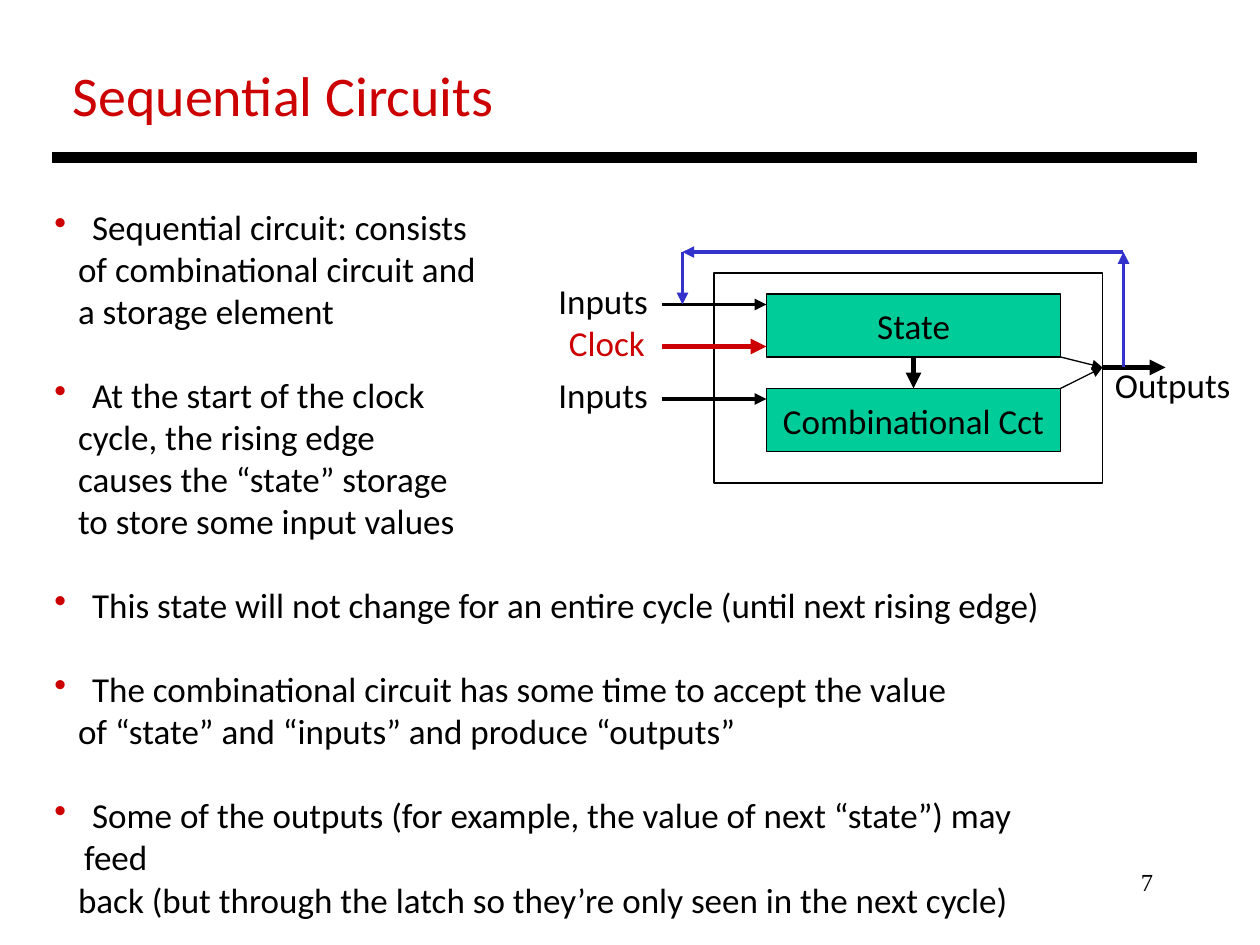
"""Build a slide on sequential circuits with a state diagram."""
from dataclasses import dataclass

from lxml.etree import SubElement as Sub
from pptx import Presentation as Deck
from pptx.dml.color import RGBColor as Color
from pptx.enum.shapes import MSO_CONNECTOR as Link, MSO_SHAPE as Form
from pptx.enum.text import MSO_ANCHOR as Anchor, MSO_AUTO_SIZE as Fit, PP_ALIGN as Align
from pptx.oxml.ns import qn
from pptx.util import Pt


@dataclass(frozen=True)
class Theme:
    black: Color = Color.from_string("000000")
    white: Color = Color.from_string("FFFFFF")
    red: Color = Color.from_string("CC0000")
    green: Color = Color.from_string("00CC99")
    blue: Color = Color.from_string("3333CC")
    font: str = "Calibri"
    serif: str = "Times New Roman"
    head: int = 32
    body: int = 20
    small: int = 14
    pitch: int = 24


LOOK = Theme()


@dataclass(frozen=True)
class Box:
    left: float
    top: float
    width: float
    height: float
    fill: Color
    text: str = ""


@dataclass(frozen=True)
class Line:
    start: tuple[float, float]
    end: tuple[float, float]
    weight: float
    color: Color = LOOK.black
    arrow: bool = True


@dataclass(frozen=True)
class Label:
    text: str
    left: float
    top: float
    width: float
    height: float = 31.5
    color: Color = LOOK.black
    size: int = LOOK.body


BOXES = (
    Box(408, 156, 222, 120, LOOK.white),
    Box(438, 168, 168, 36, LOOK.green, "State"),
    Box(438, 222, 168, 36, LOOK.green, "Combinational Cct"),
)
LINES = (
    Line((30, 90), (684, 90), 6, arrow=False),
    Line((522, 204), (522, 222), 3),
    Line((378, 174), (438, 174), 2.25),
    Line((378, 198), (438, 198), 3, LOOK.red),
    Line((378, 228), (438, 228), 2.25),
    Line((630, 210), (666, 210), 3),
    Line((606, 204), (630, 210), 0.75),
    Line((606, 222), (630, 210), 0.75),
    Line((642, 210), (642, 144), 2.25, LOOK.blue),
    Line((642, 144), (390, 144), 2.25, LOOK.blue),
    Line((390, 144), (390, 174), 2.25, LOOK.blue),
)
LABELS = (
    Label("Sequential Circuits", 34.5, 31, 258, 46, LOOK.red, LOOK.head),
    Label("Inputs", 312, 156, 66),
    Label("Clock", 318, 180, 58.5, color=LOOK.red),
    Label("Inputs", 312, 210, 66),
    Label("Outputs", 630, 204, 84),
)
POINTS = (
    (" Sequential circuit: consists",
     "of combinational circuit and",
     "a storage element"),
    (" At the start of the clock",
     "cycle, the rising edge",
     "causes the “state” storage",
     "to store some input values"),
    (" This state will not change for an entire cycle (until next rising edge)",),
    (" The combinational circuit has some time to accept the value",
     "of “state” and “inputs” and produce “outputs”"),
    (" Some of the outputs (for example, the value of next “state”) may feed",
     "back (but through the latch so they’re only seen in the next cycle)"),
)


def put_text(para, text: str, *, size: int = LOOK.body, color: Color = LOOK.black,
             font: str = LOOK.font, align: Align = Align.LEFT) -> None:
    para.alignment = align
    run = para.add_run()
    run.text = text
    run.font.size = Pt(size)
    run.font.name = font
    run.font.color.rgb = color


def draw_box(slide, box: Box) -> None:
    shape = slide.shapes.add_shape(
        Form.RECTANGLE, Pt(box.left), Pt(box.top), Pt(box.width), Pt(box.height))
    shape.shadow.inherit = False
    shape.fill.solid()
    shape.fill.fore_color.rgb = box.fill
    shape.line.color.rgb = LOOK.black
    shape.line.width = Pt(0.75)
    if box.text:
        frame = shape.text_frame
        frame.word_wrap = False
        frame.vertical_anchor = Anchor.MIDDLE
        put_text(frame.paragraphs[0], box.text, align=Align.CENTER)


def draw_line(slide, line: Line) -> None:
    link = slide.shapes.add_connector(
        Link.STRAIGHT, *map(Pt, line.start + line.end))
    link.line.color.rgb = line.color
    link.line.width = Pt(line.weight)
    props = link.element.spPr
    if line.arrow:
        Sub(props.find(qn("a:ln")), qn("a:tailEnd"), type="triangle")
    Sub(props, qn("a:effectLst"))


def draw_label(slide, label: Label) -> None:
    area = slide.shapes.add_textbox(
        Pt(label.left), Pt(label.top), Pt(label.width), Pt(label.height))
    frame = area.text_frame
    frame.word_wrap = False
    frame.auto_size = Fit.SHAPE_TO_FIT_TEXT
    put_text(frame.paragraphs[0], label.text, size=label.size, color=label.color)


def indent(para, left: float, hang: float = 0) -> None:
    props = para._p.get_or_add_pPr()
    props.set("marL", str(Pt(left)))
    props.set("indent", str(-Pt(hang)))


def add_dot(para) -> None:
    props = para._p.get_or_add_pPr()
    Sub(Sub(props, qn("a:buClr")), qn("a:srgbClr"), val=str(LOOK.red))
    Sub(props, qn("a:buChar"), char="•")


def draw_points(slide) -> None:
    frame = slide.shapes.add_textbox(Pt(24), Pt(114), Pt(600), Pt(395)).text_frame
    frame.word_wrap = True
    rows = [(at, row, text) for at, point in enumerate(POINTS)
            for row, text in enumerate(point)]
    for at, row, text in rows:
        first = row == 0
        para = frame.add_paragraph() if at or row else frame.paragraphs[0]
        put_text(para, text)
        para.line_spacing = Pt(LOOK.pitch)
        para.space_before = Pt(LOOK.pitch if first and at else 0)
        if first:
            indent(para, 17, 17)
            add_dot(para)
        else:
            indent(para, 13.5)


def main() -> None:
    deck = Deck()
    deck.slide_width, deck.slide_height = Pt(720), Pt(540)
    slide = deck.slides.add_slide(deck.slide_layouts[6])
    for box in BOXES:
        draw_box(slide, box)
    for line in LINES:
        draw_line(slide, line)
    for label in LABELS:
        draw_label(slide, label)
    draw_points(slide)
    page = slide.shapes.add_textbox(Pt(516), Pt(492), Pt(150), Pt(36)).text_frame
    page.word_wrap = True
    put_text(page.paragraphs[0], "7", size=LOOK.small, font=LOOK.serif, align=Align.RIGHT)
    deck.save("out.pptx")


if __name__ == "__main__":
    main()
